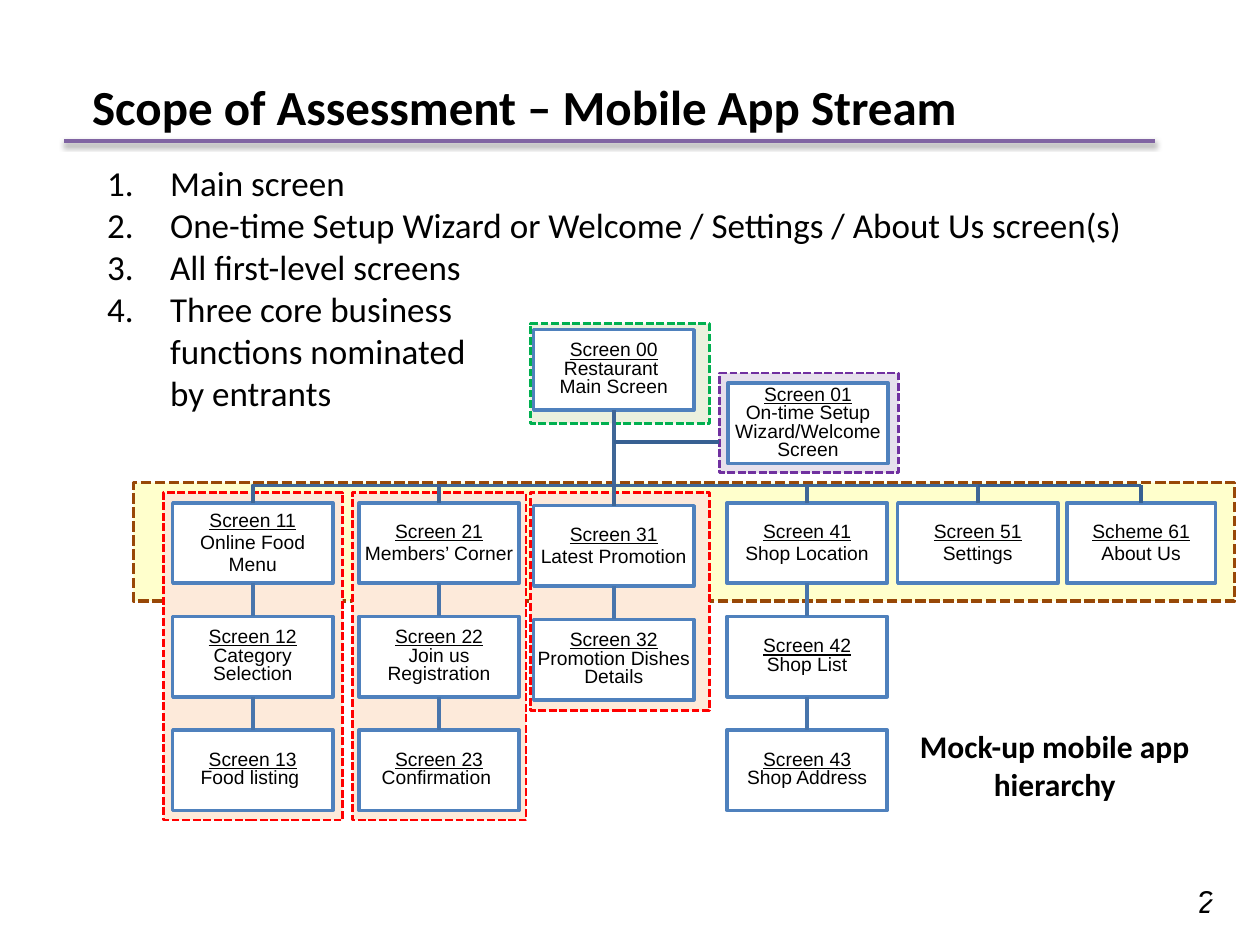
"""Build the slide on the scope of assessment for the mobile app stream."""
from dataclasses import dataclass
from itertools import pairwise

from lxml.etree import SubElement
from pptx import Presentation
from pptx.dml.color import RGBColor
from pptx.enum.dml import MSO_LINE
from pptx.enum.shapes import MSO_CONNECTOR, MSO_SHAPE
from pptx.enum.text import MSO_ANCHOR, MSO_AUTO_SIZE, PP_ALIGN
from pptx.oxml.ns import qn
from pptx.shapes.autoshape import Shape
from pptx.shapes.connector import Connector
from pptx.slide import Slide
from pptx.util import Pt


@dataclass(frozen=True)
class Theme:
    """Colours, fonts and sizes of the slide."""
    black: str = "000000"
    white: str = "FFFFFF"
    edge: str = "4F81BD"
    link: str = "4875AC"
    branch: str = "3F6797"
    bus: str = "376092"
    rule: str = "8064A2"
    sans: str = "Calibri"
    label: str = "Arial"
    title: float = 28
    body: float = 20
    note: float = 18
    small: float = 11
    stroke: float = 2


@dataclass(frozen=True)
class Area:
    """A dashed frame around some screens."""
    left: float
    top: float
    width: float
    height: float
    fill: str
    line: str
    weight: float = 1.5


@dataclass(frozen=True)
class Screen:
    """A box that stands for one screen."""
    left: float
    top: float
    lines: tuple[str, ...]
    space: float = 0.8
    width: float = 91.5


THEME = Theme()
WIDE, HIGH = 91.5, 46
ROW, STEP, BUS = 287.3, 64.9, 277.4

AREAS = (
    Area(303, 185, 102.5, 57, "EBF1DE", "00B050"),
    Area(76.3, 275.8, 629.3, 67.7, "FFFFCC", "984807", 2),
    Area(303, 281.5, 102.5, 124.6, "FDEADA", "FF0000"),
    Area(201.4, 281.5, 99.2, 187.2, "FDEADA", "FF0000"),
    Area(411, 213.2, 102.5, 57, "E6E0EC", "7030A0"),
    Area(93.4, 281.5, 102.5, 187.2, "FDEADA", "FF0000"),
)

COLUMNS = (
    (98.7, ROW, WIDE, (("Screen 11", "Online Food Menu"),
                       ("Screen 12", "Category Selection"),
                       ("Screen 13", "Food listing "))),
    (205.2, ROW, WIDE, (("Screen 21", "Members’ Corner"),
                        ("Screen 22", "Join us Registration"),
                        ("Screen 23", "Confirmation "))),
    (305, 289, WIDE, (("Screen 31", "Latest Promotion"),
                      ("Screen 32", "Promotion Dishes Details"))),
    (415.5, ROW, WIDE, (("Screen 41", "Shop Location"),
                        ("Screen 42", "Shop List"),
                        ("Screen 43", "Shop Address"))),
    (513, ROW, WIDE, (("Screen 51", "Settings"),)),
    (609.6, ROW, 85, (("Scheme 61", "About Us"),)),
)

MAIN = Screen(305, 188.4, ("Screen 00", "Restaurant ", "Main Screen"))
SETUP = Screen(416, 218.9, ("Screen 01", "On-time Setup",
                            "Wizard/Welcome Screen"))

POINTS = ("Main screen",
          "One-time Setup Wizard or Welcome / Settings / About Us screen(s)",
          "All first-level screens",
          "Three core business")
MORE = ("functions nominated", "by entrants")


def rgb(code: str) -> RGBColor:
    """Turn a hex code into a colour."""
    return RGBColor.from_string(code)


def place(shape: Shape, left: float, top: float,
          width: float, height: float) -> None:
    """Move and size a shape in points."""
    shape.left, shape.top = Pt(left), Pt(top)
    shape.width, shape.height = Pt(width), Pt(height)


def style(shape: Shape, face: str, size: float, tint: str = THEME.black,
          bold: bool = False) -> None:
    """Format all the runs of a shape."""
    for para in shape.text_frame.paragraphs:
        for run in para.runs:
            font = run.font
            font.name, font.size, font.bold = face, Pt(size), bold
            font.color.rgb = rgb(tint)


def block(slide: Slide, area: Area) -> Shape:
    """Draw a filled and outlined rectangle."""
    shape = slide.shapes.add_shape(
        MSO_SHAPE.RECTANGLE, Pt(area.left), Pt(area.top),
        Pt(area.width), Pt(area.height))
    shape.shadow.inherit = False
    shape.fill.solid()
    shape.fill.fore_color.rgb = rgb(area.fill)
    shape.line.color.rgb = rgb(area.line)
    shape.line.width = Pt(area.weight)
    return shape


def card(slide: Slide, screen: Screen) -> Shape:
    """Draw a screen box with its text."""
    shape = block(slide, Area(screen.left, screen.top, screen.width, HIGH,
                              THEME.white, THEME.edge, THEME.stroke))
    frame = shape.text_frame
    frame.word_wrap, frame.vertical_anchor = True, MSO_ANCHOR.MIDDLE
    frame.margin_left = frame.margin_right = Pt(0.72)
    frame.margin_top = frame.margin_bottom = Pt(0.72)
    frame.text = "\n".join(screen.lines)
    for para in frame.paragraphs:
        para.alignment, para.line_spacing = PP_ALIGN.CENTER, screen.space
    style(shape, THEME.label, THEME.small)
    frame.paragraphs[0].runs[0].font.underline = True
    return shape


def wire(slide: Slide, start: tuple[float, float], end: tuple[float, float],
         tint: str, shade: bool = False) -> Connector:
    """Draw a straight line, with or without a shadow."""
    line = slide.shapes.add_connector(
        MSO_CONNECTOR.STRAIGHT, *(Pt(v) for v in start + end))
    line.line.color.rgb, line.line.width = rgb(tint), Pt(THEME.stroke)
    if not shade:
        SubElement(line._element.spPr, qn("a:effectLst"))
    return line


def join(slide: Slide, upper: Shape, lower: Shape, tint: str) -> None:
    """Link the foot of one box to the head of another."""
    line = wire(slide, (0, 0), (0, 0), tint)
    line.begin_connect(upper, 2)
    line.end_connect(lower, 0)


def bend(slide: Slide, upper: Shape, lower: Shape) -> None:
    """Draw a stepped branch from one box to another."""
    start, end = (box.left + box.width // 2 for box in (upper, lower))
    pen = slide.shapes.build_freeform(start, upper.top + upper.height)
    pen.add_line_segments(
        [(start, Pt(BUS)), (end, Pt(BUS)), (end, lower.top)], close=False)
    path = pen.convert_to_shape()
    path.fill.background()
    path.shadow.inherit = False
    path.line.color.rgb, path.line.width = rgb(THEME.branch), Pt(THEME.stroke)


def note(slide: Slide, text: str, left: float, top: float, width: float,
         height: float) -> Shape:
    """Add a text box that wraps."""
    box = slide.shapes.add_textbox(Pt(left), Pt(top), Pt(width), Pt(height))
    box.text_frame.word_wrap = True
    box.text_frame.text = text
    return box


def fill_body(body: Shape) -> None:
    """Write the numbered list."""
    place(body, 54, 88.6, 635, 152.6)
    frame = body.text_frame
    frame.auto_size = MSO_AUTO_SIZE.NONE
    frame.text = "\n".join(POINTS + MORE)
    for rank, para in enumerate(frame.paragraphs):
        props = para._p.get_or_add_pPr()
        first = rank < len(POINTS)
        props.set("marL", str(Pt(36)))
        props.set("indent", str(Pt(-36 if first else 0)))
        if first:
            SubElement(props, qn("a:buFont"), typeface="+mj-lt")
            SubElement(props, qn("a:buAutoNum"), type="arabicPeriod")
        else:
            SubElement(props, qn("a:buNone"))
        para.space_before = Pt(0)
    style(body, THEME.sans, THEME.body)


def draw_tree(slide: Slide) -> None:
    """Draw the frames, boxes and links of the screen tree."""
    for area in AREAS:
        block(slide, area).line.dash_style = MSO_LINE.SQUARE_DOT
    main = card(slide, MAIN)
    heads = []
    for left, top, width, names in COLUMNS:
        cards = [card(slide, Screen(left, top + STEP * row, lines,
                                    0.8 if row else 0.96, width))
                 for row, lines in enumerate(names)]
        for upper, lower in pairwise(cards):
            join(slide, upper, lower, THEME.link)
        heads.append(cards[0])
    for head in heads[:2] + heads[3:5]:
        bend(slide, main, head)
    join(slide, main, heads[2], THEME.branch)
    card(slide, SETUP)
    wire(slide, (350.8, 252.7), (411, 252.7), THEME.bus)
    wire(slide, (558.7, BUS), (652.1, BUS), THEME.bus)
    wire(slide, (652.1, BUS), (652.1, ROW), THEME.bus).end_connect(heads[5], 0)


def main() -> None:
    """Build and save the slide."""
    deck = Presentation()
    deck.slide_width, deck.slide_height = Pt(720), Pt(540)
    slide = deck.slides.add_slide(deck.slide_layouts[1])
    title, body = slide.placeholders
    place(title, 45.4, 15.8, 524, 90)
    title.text_frame.text = "Scope of Assessment – Mobile App Stream"
    title.text_frame.vertical_anchor = MSO_ANCHOR.MIDDLE
    title.text_frame.paragraphs[0].alignment = PP_ALIGN.LEFT
    style(title, THEME.sans, THEME.title, bold=True)
    fill_body(body)
    wire(slide, (36.7, 80.6), (660.2, 80.6), THEME.rule, shade=True)
    draw_tree(slide)
    label = note(slide, "Mock-up mobile app hierarchy", 494, 411.8, 217.4, 51)
    label.text_frame.paragraphs[0].alignment = PP_ALIGN.CENTER
    style(label, THEME.sans, THEME.note, bold=True)
    for left, top, tint in ((677.5, 500.4, THEME.black),
                            (683.3, 501.8, THEME.white)):
        page = note(slide, "2", left, top, 40.3, 29)
        style(page, THEME.label, THEME.note, tint, tint == THEME.white)
    deck.save("out.pptx")


if __name__ == "__main__":
    main()
